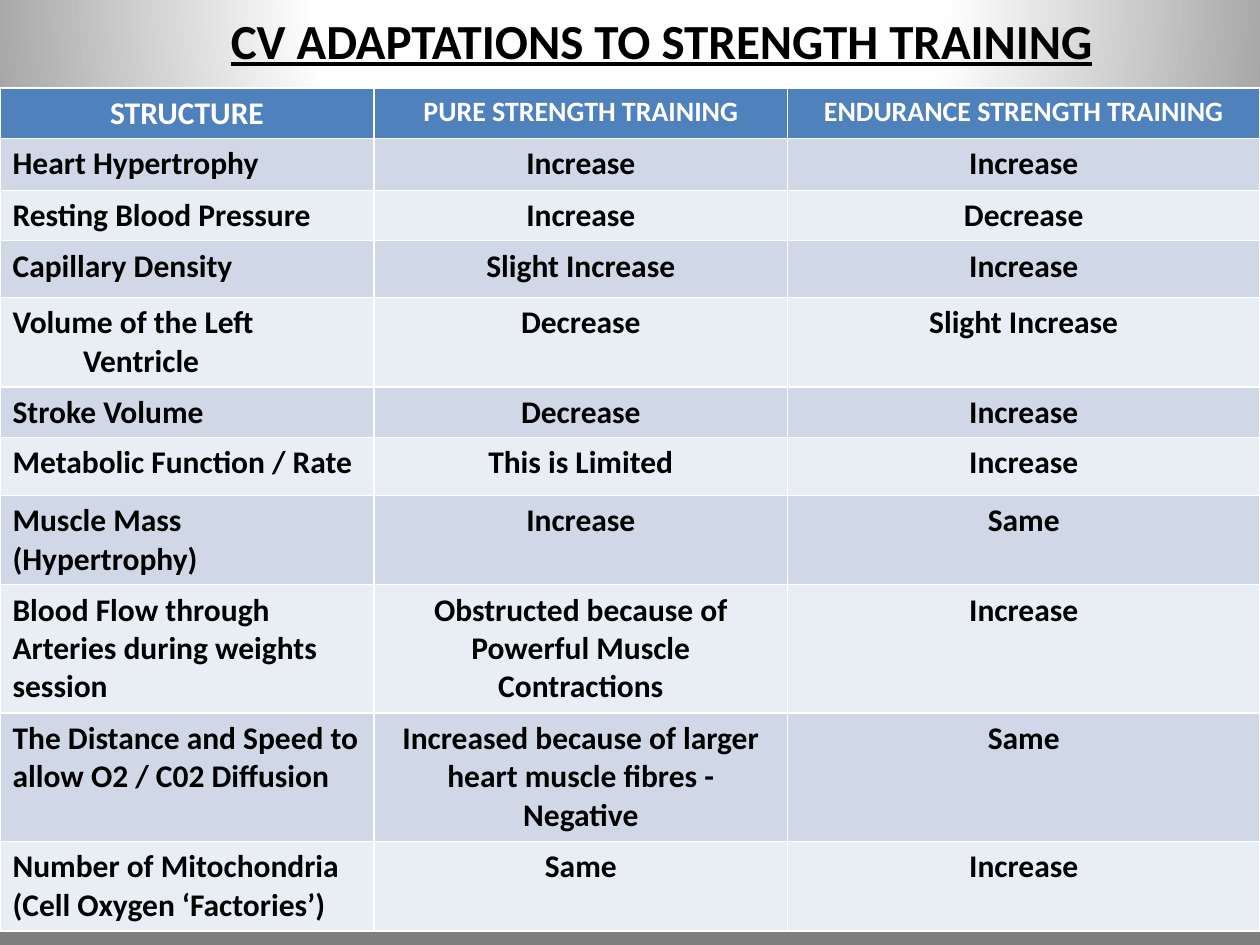
from lxml import etree
from pptx import Presentation
from pptx.dml.color import RGBColor
from pptx.enum.text import PP_ALIGN
from pptx.oxml import parse_xml
from pptx.oxml.ns import nsdecls, qn
from pptx.util import Inches, Pt

FONT = "Calibri"
COLORS = {
    "text": "000000",
    "header": "4F81BD",
    "header_text": "FFFFFF",
    "odd_row": "D0D8E8",
    "even_row": "E9EDF4",
}
BACKGROUND_STOPS = [(0, "FFFFFF"), (40, "FEFEFE"), (100, "7F7F7F")]
TITLE = "CV ADAPTATIONS TO STRENGTH TRAINING"
HEADERS = ["STRUCTURE", "PURE STRENGTH TRAINING", "ENDURANCE STRENGTH TRAINING"]
ADAPTATIONS = [
    ("Heart Hypertrophy", "Increase", "Increase"),
    ("Resting Blood Pressure", "Increase", "Decrease"),
    ("Capillary Density", "Slight Increase", "Increase"),
    ("Volume of the Left Ventricle", "Decrease", "Slight Increase"),
    ("Stroke Volume", "Decrease", "Increase"),
    ("Metabolic Function / Rate", "This is Limited", "Increase"),
    ("Muscle Mass (Hypertrophy)", "Increase", "Same"),
    ("Blood Flow through Arteries during weights session",
     "Obstructed because of Powerful Muscle Contractions", "Increase"),
    ("The Distance and Speed to allow O2 / C02 Diffusion",
     "Increased because of larger heart muscle fibres - Negative", "Same"),
    ("Number of Mitochondria (Cell Oxygen ‘Factories’)", "Same", "Increase"),
]
HANGING = {"Resting Blood Pressure", "Volume of the Left Ventricle"}
COLUMN_WIDTHS = [2.97, 3.28, 3.75]
ROW_HEIGHTS = [0.4, 0.41, 0.4, 0.45, 0.71, 0.4, 0.46, 0.71, 1.02, 1.02, 0.71]


def rgb(name):
    return RGBColor.from_string(COLORS[name])


def style_para(para, size, color, align):
    para.alignment = align
    font = para.font
    font.name = FONT
    font.size = Pt(size)
    font.bold = True
    font.color.rgb = rgb(color)


def set_background(page):
    page.background.fill.gradient()
    old = page.background._cSld.find(".//" + qn("a:gradFill"))
    stops = "".join(
        f'<a:gs pos="{pos * 1000}"><a:srgbClr val="{color}"/></a:gs>'
        for pos, color in BACKGROUND_STOPS
    )
    gradient = parse_xml(
        f'<a:gradFill {nsdecls("a")} rotWithShape="1"><a:gsLst>{stops}</a:gsLst>'
        '<a:path path="circle"><a:fillToRect l="50000" t="-80000" r="50000" '
        'b="180000"/></a:path></a:gradFill>'
    )
    old.getparent().replace(old, gradient)


def add_title(page):
    box = page.shapes.add_textbox(0, 0, Inches(10), Inches(7.5))
    frame = box.text_frame
    frame.word_wrap = True
    frame.margin_left = Inches(0.6)
    frame.margin_top = Inches(0.08)
    para = frame.paragraphs[0]
    para.text = TITLE
    style_para(para, 28, "text", PP_ALIGN.CENTER)
    para.font.underline = True


def hang_indent(para, inches):
    props = para._p.get_or_add_pPr()
    props.set("marL", str(Inches(inches)))
    props.set("indent", str(-Inches(inches)))


def fill_cell(cell, text, fill, size, color, align):
    cell.fill.solid()
    cell.fill.fore_color.rgb = rgb(fill)
    para = cell.text_frame.paragraphs[0]
    para.text = text
    style_para(para, size, color, align)
    if text in HANGING:
        hang_indent(para, 0.56)


def add_adaptation_table(page):
    frame = page.shapes.add_table(
        len(ROW_HEIGHTS), len(COLUMN_WIDTHS), 0, Inches(0.7),
        Inches(sum(COLUMN_WIDTHS)), Inches(sum(ROW_HEIGHTS)),
    )
    table = frame.table
    for column, width in zip(table.columns, COLUMN_WIDTHS):
        column.width = Inches(width)
    for row, height in zip(table.rows, ROW_HEIGHTS):
        row.height = Inches(height)
    for col, text in enumerate(HEADERS):
        size = 16 if col else 18
        fill_cell(table.cell(0, col), text, "header", size, "header_text", PP_ALIGN.CENTER)
    for row, texts in enumerate(ADAPTATIONS, start=1):
        fill = "odd_row" if row % 2 else "even_row"
        for col, text in enumerate(texts):
            align = PP_ALIGN.CENTER if col else PP_ALIGN.LEFT
            fill_cell(table.cell(row, col), text, fill, 18, "text", align)


def main():
    deck = Presentation()
    deck.slide_width = Inches(10)
    deck.slide_height = Inches(7.5)
    page = deck.slides.add_slide(deck.slide_layouts[6])
    set_background(page)
    add_title(page)
    add_adaptation_table(page)
    deck.save("out.pptx")


if __name__ == "__main__":
    main()
